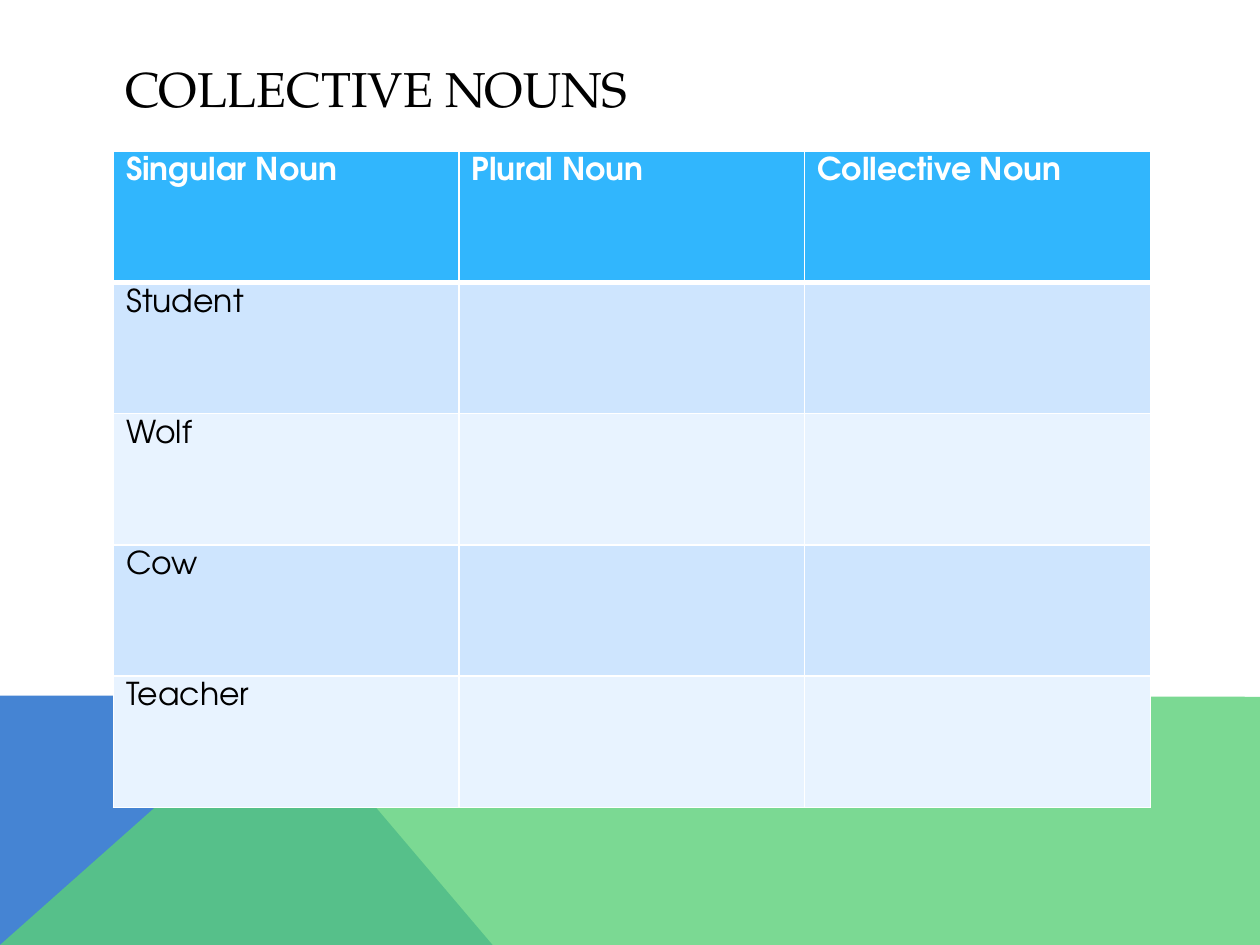
from lxml import etree
from pptx import Presentation
from pptx.dml.color import RGBColor
from pptx.enum.text import MSO_ANCHOR
from pptx.oxml.ns import qn
from pptx.util import Inches, Pt

MIDDLE = MSO_ANCHOR.MIDDLE

WHITE = RGBColor(0xFF, 0xFF, 0xFF)
BLACK = RGBColor(0x00, 0x00, 0x00)
BLUE = RGBColor(0x45, 0x84, 0xD3)
GREEN = RGBColor(0x5B, 0xD0, 0x78)
HEAD = RGBColor(0x31, 0xB6, 0xFD)
BANDS = [RGBColor(0xE8, 0xF3, 0xFF), RGBColor(0xCE, 0xE5, 0xFE)]

TITLE = {"name": "TeX Gyre Pagella", "size": Pt(28), "bold": False}
BODY = {"name": "TeX Gyre Adventor", "size": Pt(18), "bold": False}
BOLD = {**BODY, "bold": True}

HEADERS = ["Singular Noun", "Plural Noun", "Collective Noun"]
NOUNS = ["Student", "Wolf", "Cow", "Teacher"]
ROWS = [HEADERS] + [[noun, "", ""] for noun in NOUNS]


def write(frame, text, form, color):
    run = frame.paragraphs[0].add_run()
    run.text = text
    for key, value in form.items():
        setattr(run.font, key, value)
    run.font.color.rgb = color


def add_area(slide, points, color, alpha=100):
    """Draw a closed, unlined outline; alpha is its opacity in percent."""
    spots = [(Inches(x), Inches(y)) for x, y in points]
    pen = slide.shapes.build_freeform(*spots[0])
    pen.add_line_segments(spots[1:], close=True)
    area = pen.convert_to_shape()
    area.shadow.inherit = False
    area.line.fill.background()
    area.fill.solid()
    area.fill.fore_color.rgb = color
    if alpha < 100:
        tint = area.fill._xPr.find(qn("a:solidFill"))[0]
        etree.SubElement(tint, qn("a:alpha"), val=str(alpha * 1000))


def add_footer(slide, left, top, width, height):
    right, base = left + width, top + height
    peak = left + 2.23
    add_area(slide, [(left, base), (left, top), (peak, top),
                     (left + 3.91, base)], BLUE)
    add_area(slide, [(left, base), (peak, top), (right, top + 0.01),
                     (right, base)], GREEN, 80)


def add_title(slide, left, top, width, height):
    box = slide.shapes.add_textbox(*map(Inches, (left, top, width, height)))
    frame = box.text_frame
    frame.word_wrap = True
    frame.vertical_anchor = MIDDLE
    write(frame, "COLLECTIVE NOUNS", TITLE, BLACK)


def set_edges(cell, widths):
    """Give a cell white borders; widths maps L, R, T, B to points."""
    props = cell._tc.get_or_add_tcPr()
    for spot, (side, width) in enumerate(widths.items()):
        line = etree.Element(qn(f"a:ln{side}"), w=str(Pt(width)))
        fill = etree.SubElement(line, qn("a:solidFill"))
        etree.SubElement(fill, qn("a:srgbClr"), val=str(WHITE))
        props.insert(spot, line)


def add_grid(slide, left, top, width, height):
    count = len(ROWS)
    table = slide.shapes.add_table(
        count, len(HEADERS), *map(Inches, (left, top, width, height))).table
    for col in table.columns:
        col.width = Inches(width / len(HEADERS))
    for r, texts in enumerate(ROWS):
        table.rows[r].height = Inches(height / count)
        form, color = (BODY, BLACK) if r else (BOLD, WHITE)
        edges = {"L": 1, "R": 1, "T": 3 if r == 1 else 1, "B": 1 if r else 3}
        for c, text in enumerate(texts):
            cell = table.cell(r, c)
            cell.fill.solid()
            cell.fill.fore_color.rgb = BANDS[r % 2] if r else HEAD
            set_edges(cell, edges)
            if text:
                write(cell.text_frame, text, form, color)


def main():
    deck = Presentation()
    deck.slide_width, deck.slide_height = Inches(10), Inches(7.5)
    slide = deck.slides.add_slide(deck.slide_layouts[6])
    add_footer(slide, 0, 5.52, 10, 1.98)
    add_title(slide, 0.9, 0.4, 8.22, 0.6)
    add_grid(slide, 0.9, 1.2, 8.23, 5.21)
    deck.save("out.pptx")


if __name__ == "__main__":
    main()
